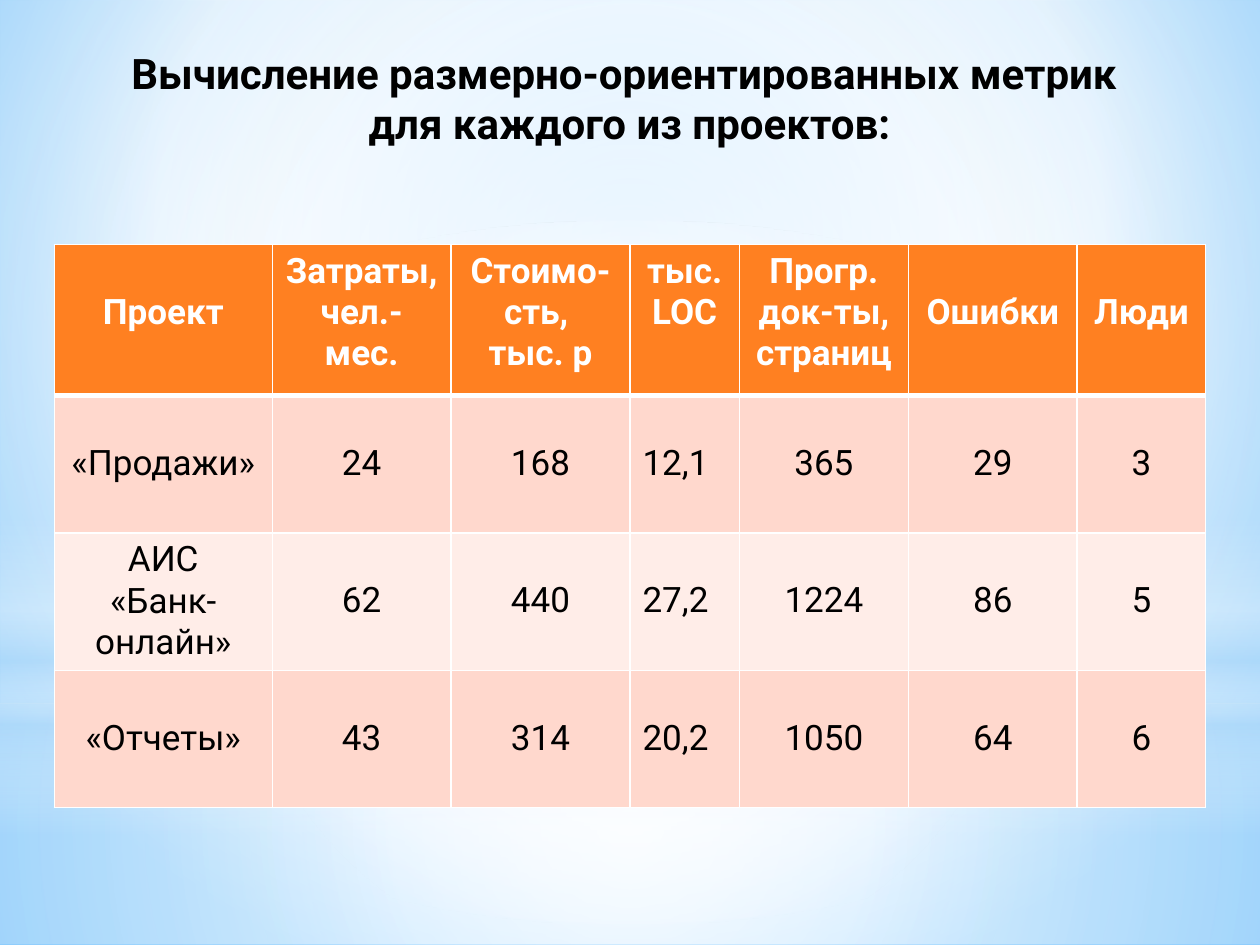
from pptx import Presentation
from pptx.dml.color import RGBColor
from pptx.enum.shapes import MSO_SHAPE as Kind
from pptx.enum.text import MSO_ANCHOR as Anchor, MSO_AUTO_SIZE as Fit, PP_ALIGN as Align
from pptx.oxml import parse_xml
from pptx.oxml.ns import nsdecls, qn
from pptx.util import Pt

TITLE = ("Вычисление размерно-ориентированных метрик \n"
         "для каждого из проектов:")
ROWS = [
    ["Проект", "Затраты,\nчел.- мес.", "Стоимо-сть, \vтыс. р", "тыс. LOC",
     "Прогр. док-ты, страниц", "Ошибки", "Люди"],
    ["«Продажи»", "24", "168", "12,1", "365", "29", "3"],
    ["АИС\n«Банк-онлайн»", "62", "440", "27,2", "1224", "86", "5"],
    ["«Отчеты»", "43", "314", "20,2", "1050", "64", "6"],
]
WIDTHS = [124.6, 102.2, 102.2, 62.6, 96.5, 96.5, 73.4]
HEAD, BODY = 86.4, 78.5
LOC = 3  # column whose values are set flush left
FILLS = ["FF8021", "FFD8CD", "FFEDE8", "FFD8CD"]
WHITE, BLACK, SKY = "FFFFFF", "000000", "B4DCFA"
MID = (50, 50, 50, 50)

# kind, box in points, stops (place, colour, opacity), focus or None for linear
GLOWS = [
    (Kind.RECTANGLE, (0, 402, 720, 138),
     [(0, WHITE, 91), (37, WHITE, 76), (100, SKY, 79)], MID),
    (Kind.RECTANGLE, (0, 0, 720, 402),
     [(0, WHITE, 89), (48, WHITE, 62), (100, SKY, 79)], MID),
    (Kind.RECTANGLE, (0, 296.6, 720, 180),
     [(0, WHITE, 0), (29, WHITE, 30), (45, SKY, 40), (55, WHITE, 26),
      (65, SKY, 60), (100, WHITE, 0)], None),
    (Kind.OVAL, (0, 126, 720, 402), [(0, WHITE, 100), (56, WHITE, 0)], MID),
]
SKY_STOPS = [(0, "9ED5FF", 100), (60, WHITE, 100), (100, "5BB9FF", 100)]


def tint(text):
    return RGBColor.from_string(text)


def put(obj, vals):
    for name, val in vals.items():
        setattr(obj, name, val)


def blend(fill, root, stops, focus):
    """Swap the fill held by root for a gradient."""
    fill.background()
    marks = "".join(
        f'<a:gs pos="{at * 1000}"><a:srgbClr val="{hue}">'
        f'<a:alpha val="{part * 1000}"/></a:srgbClr></a:gs>'
        for at, hue, part in stops)
    if focus:
        sides = " ".join(f'{s}="{v * 1000}"' for s, v in zip("ltrb", focus))
        way = f'<a:path path="circle"><a:fillToRect {sides}/></a:path>'
    else:
        way = '<a:lin ang="5400000" scaled="0"/>'
    grad = parse_xml(f'<a:gradFill {nsdecls("a")} rotWithShape="1">'
                     f'<a:gsLst>{marks}</a:gsLst>{way}</a:gradFill>')
    root.replace(root.find(qn("a:noFill")), grad)


def add_sky(slide):
    fill = slide.background.fill
    fill.background()
    root = slide.element.find(".//" + qn("p:bgPr"))
    blend(fill, root, SKY_STOPS, (20, 10, 20, 60))
    for kind, box, stops, focus in GLOWS:
        glow = slide.shapes.add_shape(kind, *map(Pt, box))
        glow.shadow.inherit = False
        glow.line.fill.background()
        blend(glow.fill, glow.element.spPr, stops, focus)


def style(frame, size, hue, bold, align):
    for para in frame.paragraphs:
        para.alignment = align
        put(para.font, {"name": "Roboto", "size": Pt(size), "bold": bold})
        para.font.color.rgb = tint(hue)


def add_title(slide):
    title = slide.shapes.title
    put(title, {"left": Pt(52.6), "top": Pt(23), "width": Pt(614.2), "height": Pt(65.5)})
    frame = title.text_frame
    frame.text = TITLE
    put(frame, {"word_wrap": False, "auto_size": Fit.NONE,
                "vertical_anchor": Anchor.MIDDLE})
    style(frame, 24, BLACK, True, Align.CENTER)
    slide.shapes._spTree.append(title.element)  # in front of the glows


def edge(cell, side, width):
    cell._tc.get_or_add_tcPr().append(parse_xml(
        f'<a:ln{side} {nsdecls("a")} w="{Pt(width)}"><a:solidFill>'
        f'<a:srgbClr val="{WHITE}"/></a:solidFill></a:ln{side}>'))


def set_cell(cell, text, row, col):
    head = row == 0
    cell.text = text
    # A single word sits one line lower, level with the middle of three lines.
    cell.margin_top = Pt(27 if len(text.split()) == 1 else 3.6)
    cell.vertical_anchor = Anchor.TOP
    left = col == LOC and not head
    style(cell.text_frame, 20, WHITE if head else BLACK, head,
          Align.LEFT if left else Align.CENTER)
    for side in "LRTB":
        thick = (head and side == "B") or (row == 1 and side == "T")
        edge(cell, side, 3 if thick else 1)
    cell.fill.solid()
    cell.fill.fore_color.rgb = tint(FILLS[row])


def add_grid(slide):
    highs = [HEAD] + [BODY] * (len(ROWS) - 1)
    box = (31, 139.7, sum(WIDTHS), sum(highs))
    grid = slide.shapes.add_table(len(ROWS), len(WIDTHS), *map(Pt, box)).table
    for col, width in zip(grid.columns, WIDTHS):
        col.width = Pt(width)
    for row, high in zip(grid.rows, highs):
        row.height = Pt(high)
    for r, texts in enumerate(ROWS):
        for c, text in enumerate(texts):
            set_cell(grid.cell(r, c), text, r, c)


def main():
    deck = Presentation()
    put(deck, {"slide_width": Pt(720), "slide_height": Pt(540)})
    slide = deck.slides.add_slide(deck.slide_layouts[5])
    add_sky(slide)
    add_title(slide)
    add_grid(slide)
    deck.save("out.pptx")


if __name__ == "__main__":
    main()
